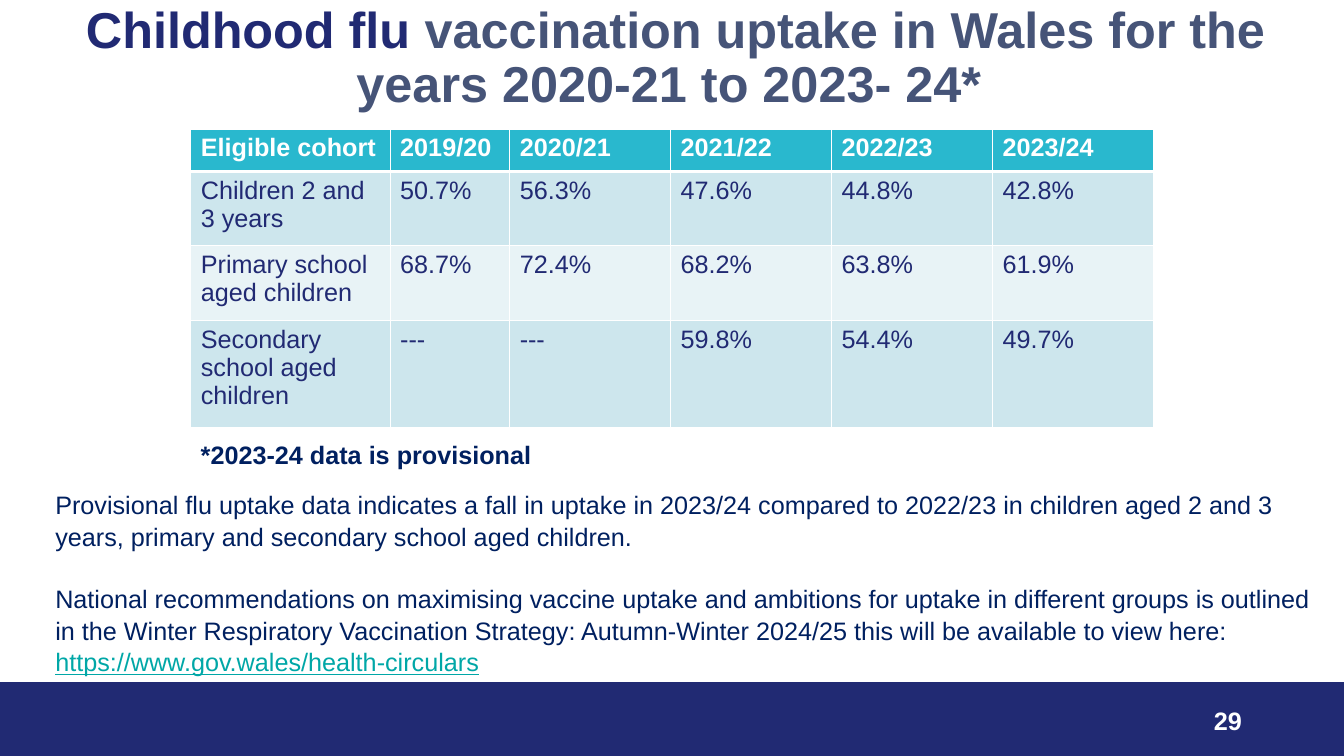
from lxml import etree
from pptx import Presentation
from pptx.dml.color import RGBColor
from pptx.enum.shapes import MSO_SHAPE
from pptx.enum.text import MSO_ANCHOR, PP_ALIGN
from pptx.oxml.ns import qn
from pptx.util import Pt

RECTANGLE = MSO_SHAPE.RECTANGLE
TOP, MIDDLE = MSO_ANCHOR.TOP, MSO_ANCHOR.MIDDLE
LEFT, CENTER, RIGHT = PP_ALIGN.LEFT, PP_ALIGN.CENTER, PP_ALIGN.RIGHT
NAVY, SLATE, DARK_BLUE, WHITE = "212A73", "465478", "002060", "FFFFFF"
HEADER_FILL, BAND_FILLS = "29B8CE", ("E8F3F6", "CDE6ED")


def rgb(color):
    return RGBColor.from_string(color)


def write_runs(paragraph, parts, size=18, bold=False):
    for text, color in parts:
        run = paragraph.add_run()
        run.text = text
        run.font.name = "Arial"
        run.font.size = Pt(size)
        run.font.bold = bold
        run.font.color.rgb = rgb(color)


presentation = Presentation()
presentation.slide_width, presentation.slide_height = Pt(960), Pt(540)
slide = presentation.slides.add_slide(presentation.slide_layouts[6])

# Footer band
band = slide.shapes.add_shape(RECTANGLE, Pt(0), Pt(487.4), Pt(960), Pt(52.6))
band.shadow.inherit = False
band.fill.solid()
band.fill.fore_color.rgb = rgb(NAVY)
band.line.color.rgb = rgb(NAVY)
band.line.width = Pt(1)

# Uptake table
rows = [
    ("Eligible cohort", "2019/20", "2020/21", "2021/22", "2022/23", "2023/24"),
    ("Children 2 and 3 years", "50.7%", "56.3%", "47.6%", "44.8%", "42.8%"),
    ("Primary school aged children", "68.7%", "72.4%", "68.2%", "63.8%", "61.9%"),
    ("Secondary school aged children", "---", "---", "59.8%", "54.4%", "49.7%"),
]
column_widths = [142.4, 85.4] + [115] * 4
row_heights = [30.2, 53.2, 53.2, 76.4]
table = slide.shapes.add_table(
    len(rows), len(column_widths), Pt(136.3), Pt(92.2),
    Pt(sum(column_widths)), Pt(sum(row_heights))).table
for column, width in zip(table.columns, column_widths):
    column.width = Pt(width)
for row_index, values in enumerate(rows):
    table.rows[row_index].height = Pt(row_heights[row_index])
    is_header = row_index == 0
    for column_index, value in enumerate(values):
        cell = table.cell(row_index, column_index)
        write_runs(cell.text_frame.paragraphs[0],
                   [(value, WHITE if is_header else NAVY)], bold=is_header)
        # White borders, with a thicker rule between header and body
        properties = cell._tc.get_or_add_tcPr()
        for side in ("lnL", "lnR", "lnT", "lnB"):
            thick = (row_index, side) in ((0, "lnB"), (1, "lnT"))
            border = etree.SubElement(properties, qn(f"a:{side}"), w=str(Pt(3 if thick else 1)))
            border_fill = etree.SubElement(border, qn("a:solidFill"))
            etree.SubElement(border_fill, qn("a:srgbClr"), val=WHITE)
        cell.fill.solid()
        cell.fill.fore_color.rgb = rgb(HEADER_FILL if is_header else BAND_FILLS[row_index % 2])

# Title, table note, commentary and slide number:
# box, anchor, alignment, line spacing, size, bold, paragraphs
text_boxes = [
    ((25.9, 0, 913.7, 52.6), TOP, CENTER, 0.9, 36, True, [
        [("Childhood flu ", NAVY),
         ("vaccination uptake in Wales for the years 2020-21 to 2023- 24* ", SLATE)]]),
    ((136.3, 310.3, 480, 28.8), TOP, LEFT, 1, 18, True, [
        [("*2023-24 data is provisional", DARK_BLUE)]]),
    ((32.4, 344.9, 913.7, 138.2), TOP, LEFT, 1.05, 18, False, [
        [("Provisional flu uptake data indicates a fall in uptake in 2023/24 compared to "
          "2022/23 in children aged 2 and 3 years, primary and secondary school aged "
          "children.", DARK_BLUE)],
        [("National recommendations on maximising vaccine uptake and ambitions for uptake "
          "in different groups is outlined in the Winter Respiratory Vaccination Strategy: "
          "Autumn-Winter 2024/25 this will be available to view here: ", DARK_BLUE),
         ("https://www.gov.wales/health-circulars", "00A7A7")]]),
    ((678.2, 500.4, 216, 28.8), MIDDLE, RIGHT, 1, 18, True, [[("29", WHITE)]]),
]
for box, anchor, alignment, spacing, size, bold, paragraphs in text_boxes:
    shape = slide.shapes.add_textbox(*map(Pt, box))
    text_frame = shape.text_frame
    text_frame.word_wrap = True
    text_frame.vertical_anchor = anchor
    for index, parts in enumerate(paragraphs):
        paragraph = text_frame.add_paragraph() if index else text_frame.paragraphs[0]
        paragraph.alignment = alignment
        paragraph.line_spacing = spacing
        paragraph.space_before = Pt(21.6 if index else 0)
        write_runs(paragraph, parts, size, bold)
        for run in paragraph.runs:
            if run.text.startswith("https"):
                run.font.underline = True

presentation.save("out.pptx")
